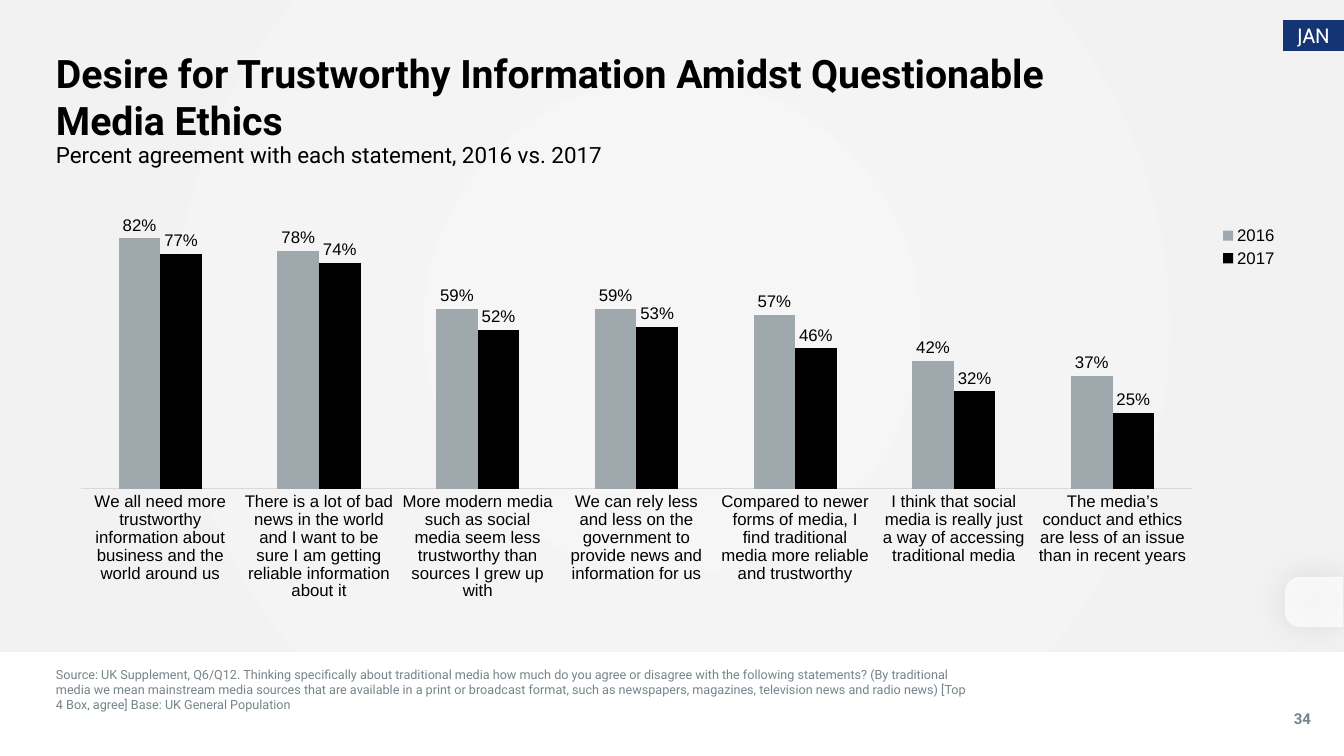
from lxml import etree
from pptx import Presentation
from pptx.chart.data import CategoryChartData
from pptx.dml.color import RGBColor
from pptx.enum.chart import XL_CHART_TYPE as ChartType, XL_LABEL_POSITION as LabelPos
from pptx.enum.chart import XL_LEGEND_POSITION as LegendPos, XL_TICK_MARK as Tick
from pptx.enum.shapes import MSO_SHAPE as Shape
from pptx.enum.text import MSO_ANCHOR as Anchor, PP_ALIGN as Align
from pptx.oxml import parse_xml
from pptx.oxml.ns import nsdecls, qn
from pptx.util import Pt

BLACK = RGBColor(0x00, 0x00, 0x00)
WHITE = RGBColor(0xFF, 0xFF, 0xFF)
NAVY = RGBColor(0x14, 0x34, 0x73)
SLATE = RGBColor(0x76, 0x84, 0x89)
BAR_GREY = RGBColor(0x9F, 0xA9, 0xAD)
AXIS_GREY = RGBColor(0xD9, 0xD9, 0xD9)

# wording, (left, top, width, height) in px, font size, colour, bold, alignment
TEXTS = [
    ("Desire for Trustworthy Information Amidst Questionable Media Ethics",
     (56, 49, 1092, 105), 28, BLACK, True, Align.LEFT),
    ("Percent agreement with each statement, 2016 vs. 2017",
     (56, 141, 928, 58), 16, BLACK, False, Align.LEFT),
    ("Source: UK Supplement, Q6/Q12. Thinking specifically about traditional media how much "
     "do you agree or disagree with the following statements? (By traditional media we mean "
     "mainstream media sources that are available in a print or broadcast format, such as "
     "newspapers, magazines, television news and radio news) [Top 4 Box, agree] "
     "Base: UK General Population",
     (56, 667, 910, 52), 9, SLATE, False, Align.LEFT),
    ("34", (1285, 710, 35, 52), 10.7, SLATE, True, Align.CENTER),
]
STATEMENTS = [
    ("We all need more trustworthy information about business and the world around us", 0.82, 0.77),
    ("There is a lot of bad news in the world and I want to be sure I am getting "
     "reliable information about it", 0.78, 0.74),
    ("More modern media such as social media seem less trustworthy than sources I grew up with",
     0.59, 0.52),
    ("We can rely less and less on the government to provide news and information for us",
     0.59, 0.53),
    ("Compared to newer forms of media, I find traditional media more reliable and trustworthy",
     0.57, 0.46),
    ("I think that social media is really just a way of accessing traditional media", 0.42, 0.32),
    ("The media’s conduct and ethics are less of an issue than in recent years", 0.37, 0.25),
]
YEARS = [("2016", BAR_GREY), ("2017", BLACK)]
CHART_BOX = (56, 206, 1231, 403)
PLOT_BOX = (81, 214, 1111, 275)
LEGEND_BOX = (1218, 222, 62, 50)

PX = 914400 / 100.8


def emu(*lengths):
    return [round(length * PX) for length in lengths]


def style(font, size, color, name, bold=False):
    font.size, font.name, font.bold = Pt(size), name, bold
    font.color.rgb = color


def add_panel(page, kind, box, fill=None):
    panel = page.shapes.add_shape(kind, *emu(*box))
    panel.shadow.inherit = False
    panel.line.fill.background()
    if fill is not None:
        panel.fill.solid()
        panel.fill.fore_color.rgb = fill
    return panel


def add_text(page, wording, box, size, color, bold, align):
    frame = page.shapes.add_textbox(*emu(*box)).text_frame
    frame.word_wrap = True
    frame.margin_left = frame.margin_top = frame.margin_right = frame.margin_bottom = 0
    frame.text = wording
    para = frame.paragraphs[0]
    para.alignment = align
    style(para.runs[0].font, size, color, "Roboto", bold)


def manual_layout(box, inner=False):
    """Layout element that places a px box as fractions of the chart frame."""
    left, top, width, height = CHART_BOX
    parts = [("xMode", "edge"), ("yMode", "edge"),
             ("x", round((box[0] - left) / width, 4)), ("y", round((box[1] - top) / height, 4)),
             ("w", round(box[2] / width, 4)), ("h", round(box[3] / height, 4))]
    if inner:
        parts.insert(0, ("layoutTarget", "inner"))
    body = "".join(f'<c:{tag} val="{value}"/>' for tag, value in parts)
    return parse_xml(f'<c:layout {nsdecls("c")}><c:manualLayout>{body}</c:manualLayout></c:layout>')


def place(element, layout, before):
    for old in element.findall(qn("c:layout")):
        element.remove(old)
    element.find(qn(before)).addprevious(layout)


def add_backdrop(page):
    backdrop = add_panel(page, Shape.RECTANGLE, (0, 0, 1344, 652))
    gradient = parse_xml(
        f'<a:gradFill {nsdecls("a")} rotWithShape="1"><a:gsLst>'
        '<a:gs pos="0"><a:srgbClr val="F6F6F7"/></a:gs>'
        '<a:gs pos="100000"><a:srgbClr val="F2F2F2"/></a:gs></a:gsLst>'
        '<a:path path="circle"><a:fillToRect l="50000" t="50000" r="50000" b="50000"/></a:path>'
        '</a:gradFill>')
    backdrop.element.spPr.find(qn("a:prstGeom")).addnext(gradient)


def add_side_tab(page):
    tab = add_panel(page, Shape.ROUND_2_SAME_RECTANGLE, (1289, 573, 50, 58), WHITE)
    tab.adjustments[0], tab.adjustments[1] = 0.296, 0
    tab.rotation = 90
    properties = tab.element.spPr
    properties.find(qn("a:xfrm")).set("flipV", "1")
    color = properties.find(qn("a:solidFill")).find(qn("a:srgbClr"))
    etree.SubElement(color, qn("a:alpha")).set("val", "72000")
    properties.find(qn("a:effectLst")).append(parse_xml(
        f'<a:outerShdw {nsdecls("a")} blurRad="{Pt(25)}" dist="0" dir="{113 * 60000}">'
        '<a:srgbClr val="000000"><a:alpha val="12000"/></a:srgbClr></a:outerShdw>'))


def add_month_badge(page):
    badge = add_panel(page, Shape.RECTANGLE, (1283, 20, 61, 31), NAVY)
    frame = badge.text_frame
    frame.word_wrap = False
    frame.vertical_anchor = Anchor.MIDDLE
    frame.text = "JAN"
    para = frame.paragraphs[0]
    para.alignment = Align.CENTER
    style(para.runs[0].font, 14.7, WHITE, "Cabin")


def add_agreement_chart(page):
    data = CategoryChartData(number_format="0%")
    names, *values = zip(*STATEMENTS)
    data.categories = names
    for (year, _), shares in zip(YEARS, values):
        data.add_series(year, shares)
    chart = page.shapes.add_chart(ChartType.COLUMN_CLUSTERED, *emu(*CHART_BOX), data).chart
    style(chart.font, 10, BLACK, "Arial")
    chart.has_title = False

    plot = chart.plots[0]
    plot.gap_width, plot.overlap, plot.vary_by_categories = 182, 0, False
    for series, (_, color) in zip(plot.series, YEARS):
        series.format.fill.solid()
        series.format.fill.fore_color.rgb = color
        labels = series.data_labels
        labels.show_value = True
        labels.position = LabelPos.OUTSIDE_END
        labels.number_format, labels.number_format_is_linked = "0%", False
        style(labels.font, 12, BLACK, "Arial")

    shares_axis = chart.value_axis
    shares_axis.minimum_scale, shares_axis.maximum_scale = 0, 0.9
    shares_axis.has_major_gridlines = False
    shares_axis.visible = False
    statement_axis = chart.category_axis
    statement_axis.major_tick_mark = statement_axis.minor_tick_mark = Tick.NONE
    statement_axis.format.line.color.rgb = AXIS_GREY
    statement_axis.format.line.width = Pt(0.75)
    style(statement_axis.tick_labels.font, 12, BLACK, "Arial")

    chart.has_legend = True
    legend = chart.legend
    legend.position, legend.include_in_layout = LegendPos.RIGHT, False
    style(legend.font, 12, BLACK, "Arial")
    root = chart.element
    place(root.find(".//" + qn("c:plotArea")), manual_layout(PLOT_BOX, inner=True), "c:barChart")
    place(root.find(".//" + qn("c:legend")), manual_layout(LEGEND_BOX), "c:overlay")


def main():
    deck = Presentation()
    deck.slide_width, deck.slide_height = emu(1344, 756)
    page = deck.slides.add_slide(deck.slide_layouts[6])
    add_backdrop(page)
    for text in TEXTS:
        add_text(page, *text)
    add_agreement_chart(page)
    add_side_tab(page)
    add_month_badge(page)
    deck.save("out.pptx")


if __name__ == "__main__":
    main()
